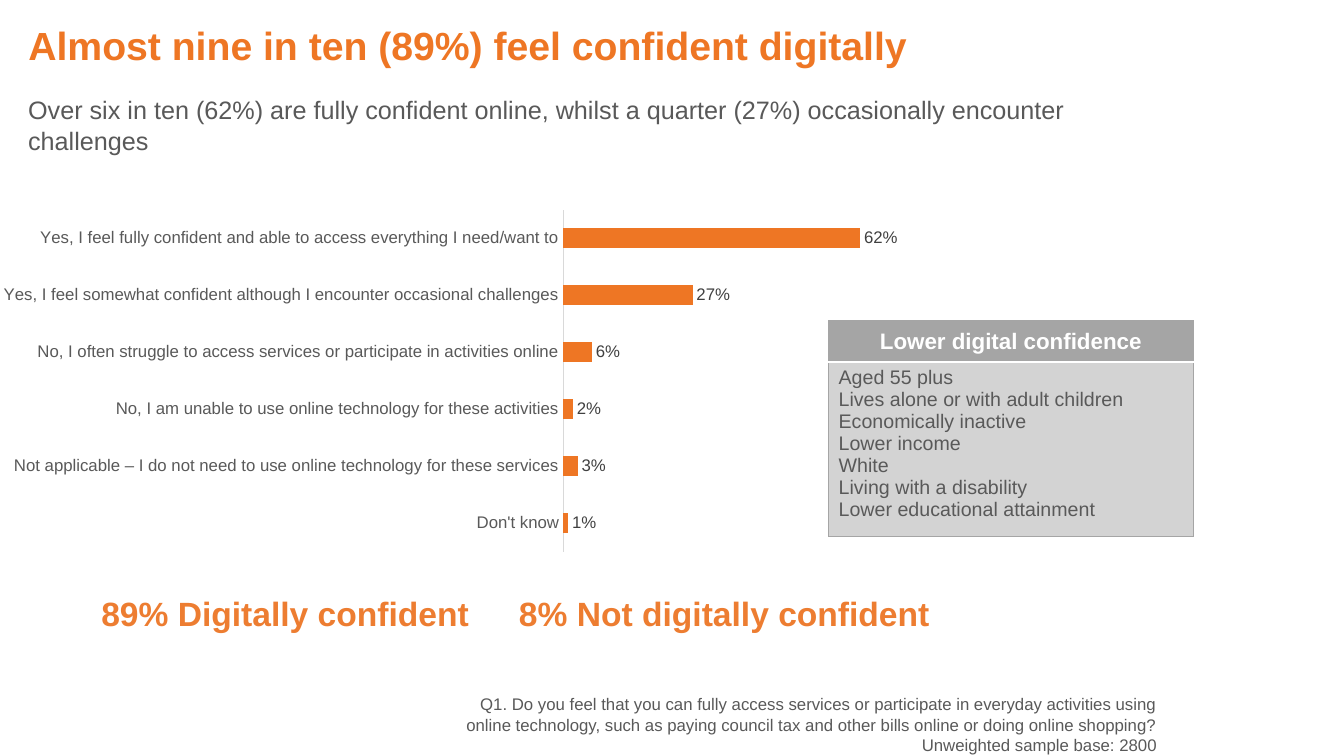
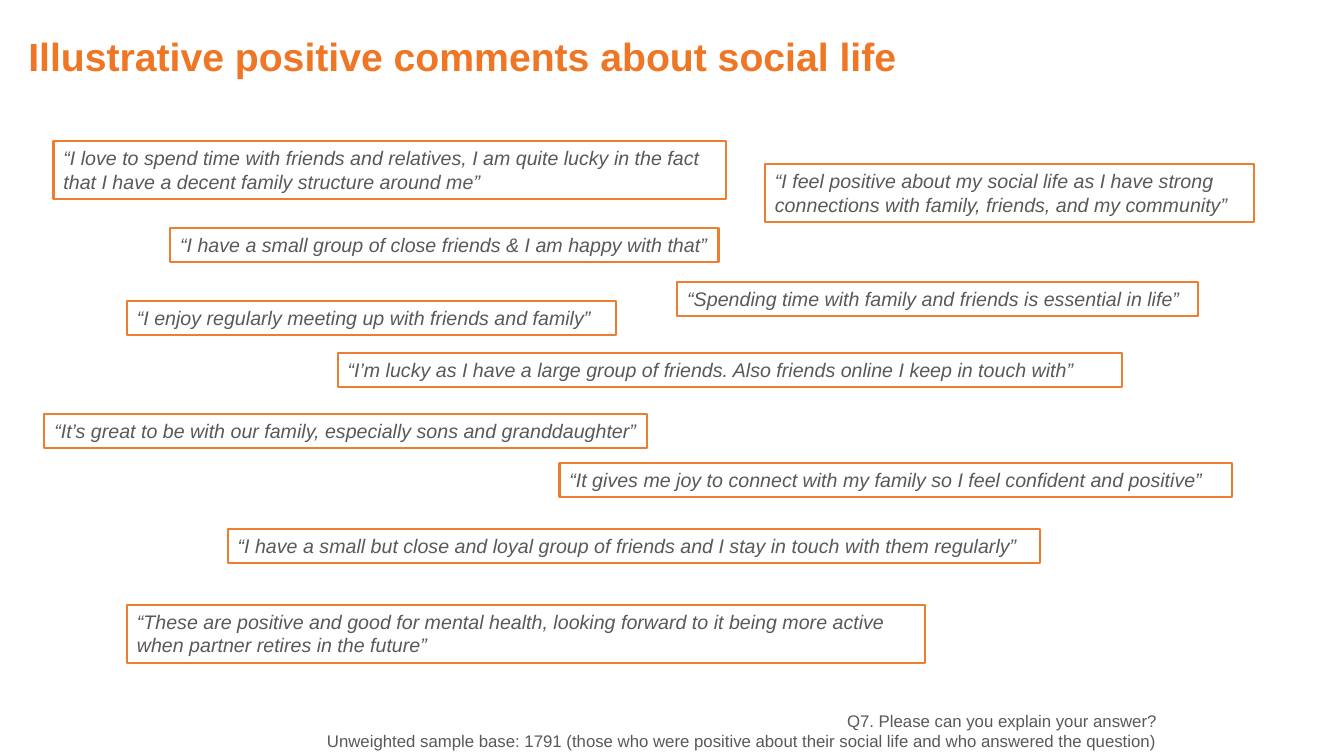
from dataclasses import dataclass, replace

from lxml import etree
from pptx import Presentation
from pptx.chart.data import CategoryChartData
from pptx.dml.color import RGBColor
from pptx.enum.chart import XL_CHART_TYPE, XL_LABEL_POSITION, XL_TICK_LABEL_POSITION, XL_TICK_MARK
from pptx.enum.shapes import MSO_SHAPE
from pptx.enum.text import MSO_ANCHOR, MSO_AUTO_SIZE, PP_ALIGN
from pptx.oxml.ns import qn
from pptx.slide import Slide
from pptx.table import _Cell
from pptx.text.text import Font, TextFrame
from pptx.util import Cm, Pt

BARS = XL_CHART_TYPE.BAR_CLUSTERED
OUTER = XL_LABEL_POSITION.OUTSIDE_END
BESIDE = XL_TICK_LABEL_POSITION.NEXT_TO_AXIS
NO_TICK = XL_TICK_MARK.NONE
RECT = MSO_SHAPE.RECTANGLE
TOP, MIDDLE = MSO_ANCHOR.TOP, MSO_ANCHOR.MIDDLE
GROW = MSO_AUTO_SIZE.SHAPE_TO_FIT_TEXT
FIXED = MSO_AUTO_SIZE.NONE
LEFT, CENTER, RIGHT = PP_ALIGN.LEFT, PP_ALIGN.CENTER, PP_ALIGN.RIGHT

FACE = "Arial"
ORANGE = RGBColor(0xEE, 0x76, 0x24)
AMBER = RGBColor(0xED, 0x7D, 0x31)
TEXT = RGBColor(0x59, 0x59, 0x59)
DARK = RGBColor(0x40, 0x40, 0x40)
GREY = RGBColor(0xA5, 0xA5, 0xA5)
PALE = RGBColor(0xD3, 0xD3, 0xD3)
RULE = RGBColor(0xD9, 0xD9, 0xD9)
WHITE = RGBColor(0xFF, 0xFF, 0xFF)


@dataclass(frozen=True)
class Style:
    size: float
    color: RGBColor = TEXT
    bold: bool = False
    italic: bool = False
    align: PP_ALIGN = LEFT
    anchor: MSO_ANCHOR = TOP
    lead: float = 1.0


@dataclass(frozen=True)
class Box:
    left: float
    top: float
    width: float
    height: float

    def place(self) -> tuple[Cm, Cm, Cm, Cm]:
        return Cm(self.left), Cm(self.top), Cm(self.width), Cm(self.height)


@dataclass(frozen=True)
class Quote:
    left: float
    top: float
    width: float
    text: str
    lines: int = 1


HEAD = Style(28, ORANGE, bold=True, anchor=MIDDLE, lead=0.9)
LEDE = Style(18)
NOTE = Style(12, align=RIGHT, anchor=MIDDLE)
STAT = Style(24, AMBER, bold=True)
CELL = Style(14)
LABEL = Style(16, WHITE, bold=True, align=CENTER, anchor=MIDDLE)
SPEECH = Style(14, italic=True)

ANSWERS = {
    "Yes, I feel fully confident and able to access everything I need/want to": 0.62,
    "Yes, I feel somewhat confident although I encounter occasional challenges": 0.27,
    "No, I often struggle to access services or participate in activities online": 0.06,
    "No, I am unable to use online technology for these activities": 0.02,
    "Not applicable – I do not need to use online technology for these services": 0.03,
    "Don't know": 0.01,
}
GROUPS = [
    "Aged 55 plus",
    "Lives alone or with adult children",
    "Economically inactive",
    "Lower income",
    "White",
    "Living with a disability",
    "Lower educational attainment",
]
QUOTES = [
    Quote(1.35, 3.56, 16.94, "“I love to spend time with friends and relatives, I am quite lucky in the fact "
          "that I have a decent family structure around me”", 2),
    Quote(19.28, 4.14, 12.32, "“I feel positive about my social life as I have strong connections with family, "
          "friends, and my community”", 2),
    Quote(4.29, 5.74, 13.82, "“I have a small group of close friends & I am happy with that”"),
    Quote(17.07, 7.11, 13.13, "“Spending time with family and friends is essential in life”"),
    Quote(3.2, 7.59, 12.32, "“I enjoy regularly meeting up with friends and family”"),
    Quote(8.51, 8.89, 19.76, "“I’m lucky as I have a large group of friends. Also friends online I keep in "
          "touch with”"),
    Quote(1.12, 10.44, 15.19, "“It’s great to be with our family, especially sons and granddaughter”"),
    Quote(14.1, 11.66, 16.94, "“It gives me joy to connect with my family so I feel confident and positive”"),
    Quote(5.74, 13.34, 20.47, "“I have a small but close and loyal group of friends and I stay in touch with "
          "them regularly”"),
    Quote(3.2, 15.24, 20.12, "“These are positive and good for mental health, looking forward to it being more "
          "active when partner retires in the future”", 2),
]


def set_font(font: Font, style: Style) -> None:
    font.name = FACE
    font.size = Pt(style.size)
    font.bold = style.bold
    font.italic = style.italic
    font.color.rgb = style.color


def write(frame: TextFrame, lines: list[str], style: Style) -> None:
    for index, line in enumerate(lines):
        para = frame.add_paragraph() if index else frame.paragraphs[0]
        para.alignment = style.align
        para.line_spacing = style.lead
        run = para.add_run()
        run.text = line
        set_font(run.font, style)


def set_frame(frame: TextFrame, lines: list[str], style: Style) -> None:
    frame.word_wrap = True
    frame.vertical_anchor = style.anchor
    write(frame, lines, style)


def add_text(slide: Slide, box: Box, lines: list[str], style: Style) -> TextFrame:
    frame = slide.shapes.add_textbox(*box.place()).text_frame
    set_frame(frame, lines, style)
    frame.auto_size = GROW
    return frame


def add_note(slide: Slide, box: Box, lines: list[str]) -> None:
    frame = add_text(slide, box, lines, NOTE)
    frame.margin_left = frame.margin_right = frame.margin_top = frame.margin_bottom = 0


def add_slide(deck: Presentation, title: str, box: Box) -> Slide:
    slide = deck.slides.add_slide(deck.slide_layouts[5])
    shape = slide.shapes.title
    shape.left, shape.top, shape.width, shape.height = box.place()
    set_frame(shape.text_frame, [title], HEAD)
    shape.text_frame.auto_size = FIXED
    return slide


def add_quote(slide: Slide, quote: Quote) -> None:
    box = Box(quote.left, quote.top, quote.width, 0.26 + 0.6 * quote.lines)
    shape = slide.shapes.add_shape(RECT, *box.place())
    shape.shadow.inherit = False
    shape.fill.background()
    shape.line.color.rgb = AMBER
    shape.line.width = Pt(1.5)
    set_frame(shape.text_frame, [quote.text], SPEECH)
    shape.text_frame.auto_size = GROW


def add_bars(slide: Slide, box: Box) -> None:
    data = CategoryChartData(number_format="0%")
    data.categories = list(ANSWERS)
    data.add_series("Series 1", list(ANSWERS.values()))
    chart = slide.shapes.add_chart(BARS, *box.place(), data).chart
    chart.has_legend = chart.has_title = False
    set_font(chart.font, Style(12))

    names = chart.category_axis
    names.reverse_order = True
    names.major_tick_mark = names.minor_tick_mark = NO_TICK
    names.tick_label_position = BESIDE
    names.has_major_gridlines = False
    names.format.line.color.rgb = RULE
    names.format.line.width = Pt(0.75)
    set_font(names.tick_labels.font, Style(12))

    scale = chart.value_axis
    scale.minimum_scale, scale.maximum_scale = 0, 0.8
    scale.has_major_gridlines = False
    scale.visible = False

    plot = chart.plots[0]
    plot.gap_width = 182
    plot.vary_by_categories = False
    fill = plot.series[0].format.fill
    fill.solid()
    fill.fore_color.rgb = ORANGE
    plot.has_data_labels = True
    labels = plot.data_labels
    labels.show_value = True
    labels.number_format = "0%"
    labels.number_format_is_linked = False
    labels.position = OUTER
    set_font(labels.font, Style(12, DARK))

    area = chart._chartSpace.chart.plotArea
    for old in area.findall(qn("c:layout")):
        area.remove(old)
    layout = etree.Element(qn("c:layout"))
    manual = etree.SubElement(layout, qn("c:manualLayout"))
    parts = {"layoutTarget": "inner", "xMode": "edge", "yMode": "edge",
             "x": "0.627", "y": "0.041", "w": "0.373", "h": "0.917"}
    for tag, value in parts.items():
        etree.SubElement(manual, qn(f"c:{tag}"), val=value)
    area.insert(0, layout)


def set_edge(cell: _Cell, index: int, side: str, color: RGBColor, width: float) -> None:
    line = etree.Element(qn(f"a:ln{side}"), w=str(Pt(width)))
    fill = etree.SubElement(line, qn("a:solidFill"))
    etree.SubElement(fill, qn("a:srgbClr"), val=str(color))
    cell._tc.get_or_add_tcPr().insert(index, line)


def set_cell(cell: _Cell, lines: list[str], style: Style, color: RGBColor, seam: str) -> None:
    cell.fill.solid()
    cell.fill.fore_color.rgb = color
    cell.vertical_anchor = style.anchor
    write(cell.text_frame, lines, style)
    for index, side in enumerate("LRTB"):
        edge = (WHITE, 1) if side == seam else (GREY, 0.5)
        set_edge(cell, index, side, *edge)


def add_panel(slide: Slide, box: Box) -> None:
    table = slide.shapes.add_table(2, 1, *box.place()).table
    table.first_row = table.horz_banding = False
    table.rows[0].height = Cm(1.04)
    table.rows[1].height = Cm(box.height - 1.04)
    set_cell(table.cell(0, 0), ["Lower digital confidence"], LABEL, GREY, "B")
    set_cell(table.cell(1, 0), GROUPS, CELL, PALE, "T")


def build_trust(deck: Presentation) -> None:
    slide = add_slide(deck, "Almost nine in ten (89%) feel confident digitally", Box(0.46, 0.36, 25.02, 1.68))
    add_note(slide, Box(10.9, 17.48, 18.26, 1.55), [
        "Q1. Do you feel that you can fully access services or participate in everyday activities using "
        "online technology, such as paying council tax and other bills online or doing online shopping?",
        "Unweighted sample base: 2800",
    ])
    add_text(slide, Box(0.46, 2.26, 26.8, 1.8), [
        "Over six in ten (62%) are fully confident online, whilst a quarter (27%) occasionally encounter challenges",
    ], LEDE)
    add_bars(slide, Box(-2.03, 4.9, 25.88, 9.4))
    add_text(slide, Box(0.94, 14.81, 11.13, 1.27), ["89% Digitally confident"], replace(STAT, align=RIGHT))
    add_text(slide, Box(12.83, 14.81, 11.79, 1.27), ["8% Not digitally confident"], STAT)
    add_panel(slide, Box(20.88, 8.08, 9.19, 5.44))


def build_social(deck: Presentation) -> None:
    slide = add_slide(deck, "Illustrative positive comments about social life", Box(0.46, 0.64, 25.35, 1.68))
    add_note(slide, Box(5.87, 17.91, 23.29, 1.02), [
        "Q7. Please can you explain your answer?",
        "Unweighted sample base: 1791 (those who were positive about their social life and who answered the question)",
    ])
    for quote in QUOTES:
        add_quote(slide, quote)


def main() -> None:
    deck = Presentation()
    deck.slide_width, deck.slide_height = Cm(33.87), Cm(19.05)
    build_trust(deck)
    build_social(deck)
    deck.save("out.pptx")


if __name__ == "__main__":
    main()
